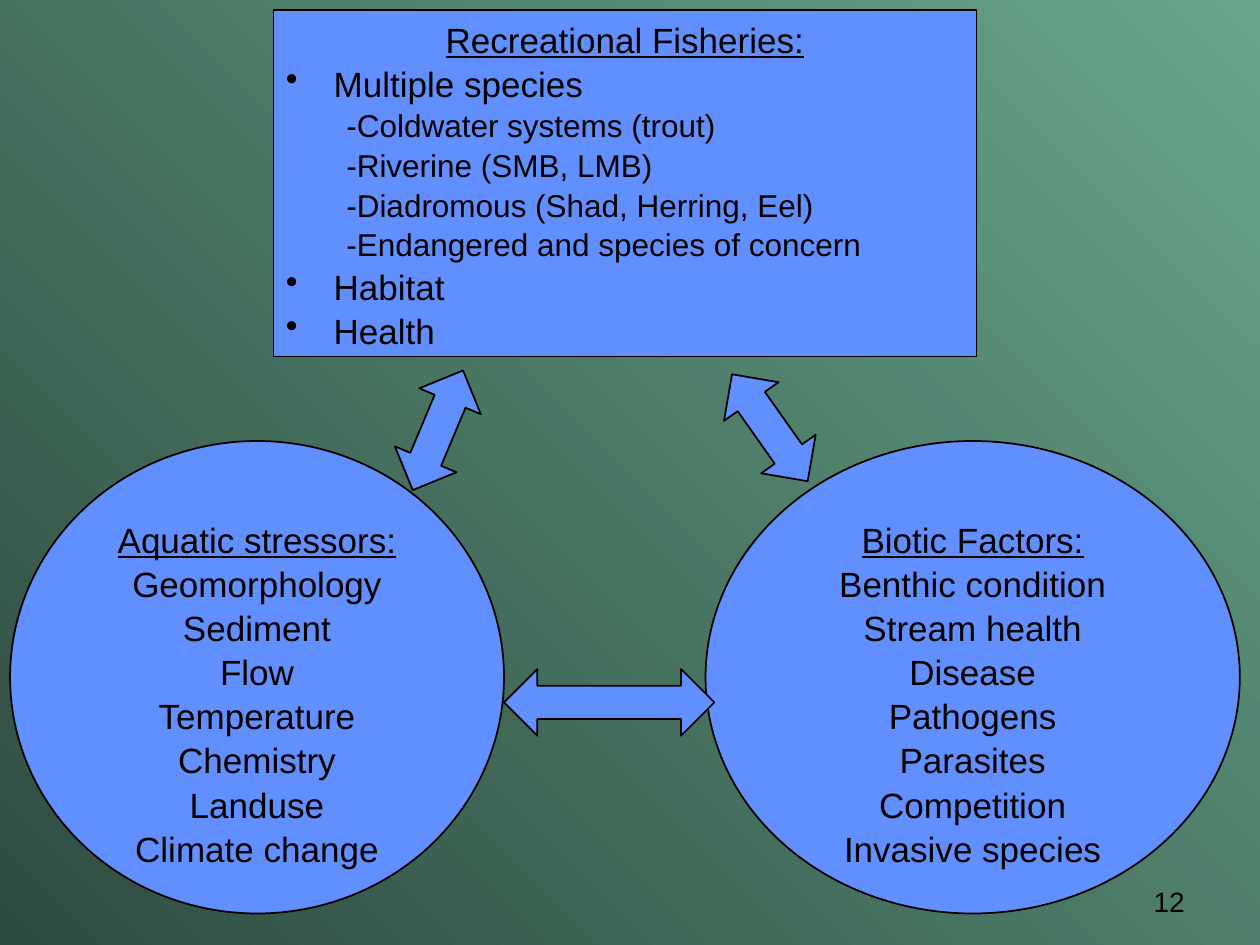
from lxml.etree import SubElement
from pptx import Presentation
from pptx.dml.color import RGBColor
from pptx.enum.shapes import MSO_SHAPE
from pptx.enum.text import MSO_ANCHOR, PP_ALIGN
from pptx.oxml.ns import qn
from pptx.util import Inches, Pt

BLUE, BLACK = "618FFD", "000000"
GRADIENT = ["2F4C40", "66A48B"]

FISHERIES = [
    ("title", "Recreational Fisheries:"),
    ("bullet", "Multiple species"),
    ("detail", "-Coldwater systems (trout)"),
    ("detail", "-Riverine (SMB, LMB)"),
    ("detail", "-Diadromous (Shad, Herring, Eel)"),
    ("detail", "-Endangered and species of concern"),
    ("bullet", "Habitat"),
    ("bullet", "Health"),
]
STRESSORS = [("title", "Aquatic stressors:")] + [("factor", name) for name in (
    "Geomorphology", "Sediment", "Flow", "Temperature", "Chemistry",
    "Landuse", "Climate change")]
BIOTIC = [("title", "Biotic Factors:")] + [("factor", name) for name in (
    "Benthic condition", "Stream health", "Disease", "Pathogens",
    "Parasites", "Competition", "Invasive species")]

PANELS = [
    (MSO_SHAPE.OVAL, (0.08, 3.5, 3.92, 3.75), STRESSORS),
    (MSO_SHAPE.RECTANGLE, (2.17, 0.08, 5.58, 2.75), FISHERIES),
    (MSO_SHAPE.OVAL, (5.6, 3.5, 4.24, 3.75), BIOTIC),
]
ARROWS = [
    ((4, 5.31, 1.67, 0.53), 0),
    ((2.96, 3.15, 1.03, 0.53), 112.8),
    ((5.59, 3.13, 1.04, 0.53), 234.7),
]
PAGE_NUMBER = ("12", (7.17, 6.95, 2.33, 0.4))


def color(value):
    return RGBColor.from_string(value)


def add_blue_shape(slide, preset, place):
    shape = slide.shapes.add_shape(preset, *map(Inches, place))
    shape.shadow.inherit = False
    shape.fill.solid()
    shape.fill.fore_color.rgb = color(BLUE)
    shape.line.color.rgb = color(BLACK)
    shape.line.width = Pt(1)
    return shape


def indent(paragraph, left, bullet=None):
    properties = paragraph._p.get_or_add_pPr()
    properties.set("marL", str(Inches(left)))
    if bullet:
        properties.set("indent", str(-Inches(left)))
        SubElement(properties, qn("a:buChar"), char=bullet)


def write(paragraph, text, size, align):
    paragraph.text = text
    paragraph.alignment = align
    paragraph.font.name = "Arial"
    paragraph.font.size = Pt(size)
    paragraph.font.color.rgb = color(BLACK)


def fill_panel(frame, lines):
    frame.word_wrap = True
    frame.vertical_anchor = MSO_ANCHOR.TOP
    for number, (role, text) in enumerate(lines):
        paragraph = frame.paragraphs[0] if number == 0 else frame.add_paragraph()
        if role == "bullet":
            indent(paragraph, 0.38, "•")
        elif role == "detail":
            indent(paragraph, 0.48)
        centered = role in ("title", "factor")
        write(paragraph, text, 18 if role == "detail" else 20,
              PP_ALIGN.CENTER if centered else PP_ALIGN.LEFT)
        paragraph.line_spacing = 1.05
        if role == "title":
            paragraph.font.underline = True


def main():
    deck = Presentation()
    deck.slide_width, deck.slide_height = Inches(10), Inches(7.5)
    slide = deck.slides.add_slide(deck.slide_layouts[6])

    backdrop = slide.background.fill
    backdrop.gradient()
    backdrop.gradient_angle = 45
    for stop, shade in zip(backdrop.gradient_stops, GRADIENT):
        stop.color.rgb = color(shade)

    for preset, place, lines in PANELS:
        fill_panel(add_blue_shape(slide, preset, place).text_frame, lines)
    for place, angle in ARROWS:
        add_blue_shape(slide, MSO_SHAPE.LEFT_RIGHT_ARROW, place).rotation = angle

    number, place = PAGE_NUMBER
    frame = slide.shapes.add_textbox(*map(Inches, place)).text_frame
    frame.word_wrap = True
    frame.vertical_anchor = MSO_ANCHOR.MIDDLE
    write(frame.paragraphs[0], number, 16, PP_ALIGN.RIGHT)

    deck.save("out.pptx")


if __name__ == "__main__":
    main()
